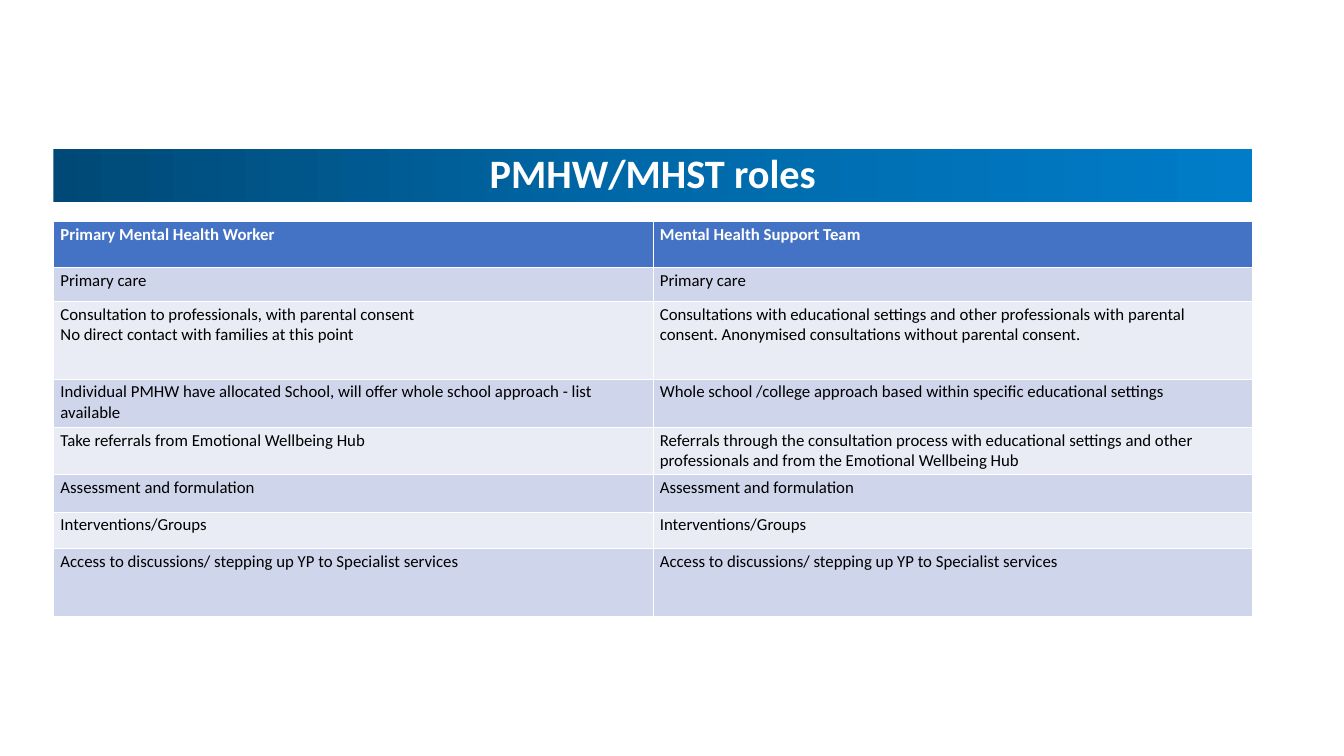
from copy import deepcopy

from lxml.etree import SubElement
from pptx import Presentation
from pptx.dml.color import RGBColor
from pptx.enum.text import MSO_ANCHOR as Anchor, MSO_AUTO_SIZE as AutoSize, PP_ALIGN as Align
from pptx.oxml.ns import qn
from pptx.util import Inches, Pt

COLOURS = {
    "banner_start": "004976",
    "banner_middle": "0069A9",
    "banner_end": "007CC8",
    "header": "4472C4",
    "odd_row": "CFD5EA",
    "even_row": "E9EBF5",
    "white": "FFFFFF",
    "black": "000000",
}
LEFT, WIDTH = 0.53, 11.89
ROW_HEIGHTS = [0.45, 0.34, 0.77, 0.48, 0.47, 0.37, 0.36, 0.68]
ROLES = [
    ("Primary Mental Health Worker", "Mental Health Support Team"),
    ("Primary care", "Primary care"),
    (
        "Consultation to professionals, with parental consent\n"
        "No direct contact with families at this point",
        "Consultations with educational settings and other professionals with parental "
        "consent. Anonymised consultations without parental consent.",
    ),
    (
        "Individual PMHW have allocated School, will offer whole school approach - list available",
        "Whole school /college approach based within specific educational settings",
    ),
    (
        "Take referrals from Emotional Wellbeing Hub",
        "Referrals through the consultation process with educational settings and other "
        "professionals and from the Emotional Wellbeing Hub",
    ),
    ("Assessment and formulation", "Assessment and formulation"),
    ("Interventions/Groups", "Interventions/Groups"),
    (
        "Access to discussions/ stepping up YP to Specialist services",
        "Access to discussions/ stepping up YP to Specialist services",
    ),
]


def colour(name):
    return RGBColor.from_string(COLOURS[name])


def set_attributes(target, values):
    for name, value in values.items():
        setattr(target, name, value)


class SlideBuilder:
    font_name = "Calibri"
    cell_format = {
        "margin_left": Inches(0.07),
        "margin_right": Inches(0.07),
        "margin_top": Inches(0.03),
        "margin_bottom": Inches(0.03),
        "vertical_anchor": Anchor.TOP,
    }

    def __init__(self, presentation):
        self.slide = presentation.slides.add_slide(presentation.slide_layouts[5])

    def text(self, frame, text, size, colour_name, bold, **paragraph_format):
        frame.text = text
        for paragraph in frame.paragraphs:
            set_attributes(paragraph, paragraph_format)
            for run in paragraph.runs:
                set_attributes(run.font, {"name": self.font_name, "size": Pt(size), "bold": bold})
                run.font.color.rgb = colour(colour_name)

    def title(self, text, top, height):
        shape = self.slide.shapes.title
        box = {"left": LEFT, "top": top, "width": WIDTH, "height": height}
        set_attributes(shape, {side: Inches(length) for side, length in box.items()})
        self.banner_fill(shape)
        frame = shape.text_frame
        set_attributes(frame, {"word_wrap": True, "auto_size": AutoSize.NONE,
                               "vertical_anchor": Anchor.MIDDLE})
        self.text(frame, text, 28.8, "white", True, alignment=Align.CENTER, line_spacing=0.9)

    def banner_fill(self, shape):
        """Fill with a left-to-right gradient of three stops."""
        shape.fill.gradient()
        shape.fill.gradient_angle = 0
        stop_list = shape.element.spPr.find(".//" + qn("a:gsLst"))
        stop_list.insert(1, deepcopy(stop_list[0]))
        names = ("banner_start", "banner_middle", "banner_end")
        for index, (stop, name) in enumerate(zip(shape.fill.gradient_stops, names)):
            stop.position = index / 2
            stop.color.rgb = colour(name)

    def table(self, rows, top, heights):
        frame = self.slide.shapes.add_table(
            len(rows), len(rows[0]), Inches(LEFT), Inches(top), Inches(WIDTH), Inches(sum(heights)))
        for row_index, (texts, height) in enumerate(zip(rows, heights)):
            frame.table.rows[row_index].height = Inches(height)
            is_header = row_index == 0
            fill = "header" if is_header else ("even_row", "odd_row")[row_index % 2]
            for column_index, text in enumerate(texts):
                cell = frame.table.cell(row_index, column_index)
                set_attributes(cell, self.cell_format)
                cell.fill.solid()
                cell.fill.fore_color.rgb = colour(fill)
                self.text(cell.text_frame, text, 12, "white" if is_header else "black", is_header)
                self.borders(cell)

    def borders(self, cell):
        properties = cell._tc.get_or_add_tcPr()
        for index, side in enumerate(("lnL", "lnR", "lnT", "lnB")):
            line = SubElement(properties, qn(f"a:{side}"), w=str(Pt(0.5)))
            fill = SubElement(line, qn("a:solidFill"))
            SubElement(fill, qn("a:srgbClr"), val=COLOURS["white"])
            properties.insert(index, line)


def main():
    presentation = Presentation()
    presentation.slide_width = Inches(13.33)
    presentation.slide_height = Inches(7.5)
    builder = SlideBuilder(presentation)
    builder.title("PMHW/MHST roles", 1.48, 0.52)
    builder.table(ROLES, 2.2, ROW_HEIGHTS)
    presentation.save("out.pptx")


if __name__ == "__main__":
    main()
